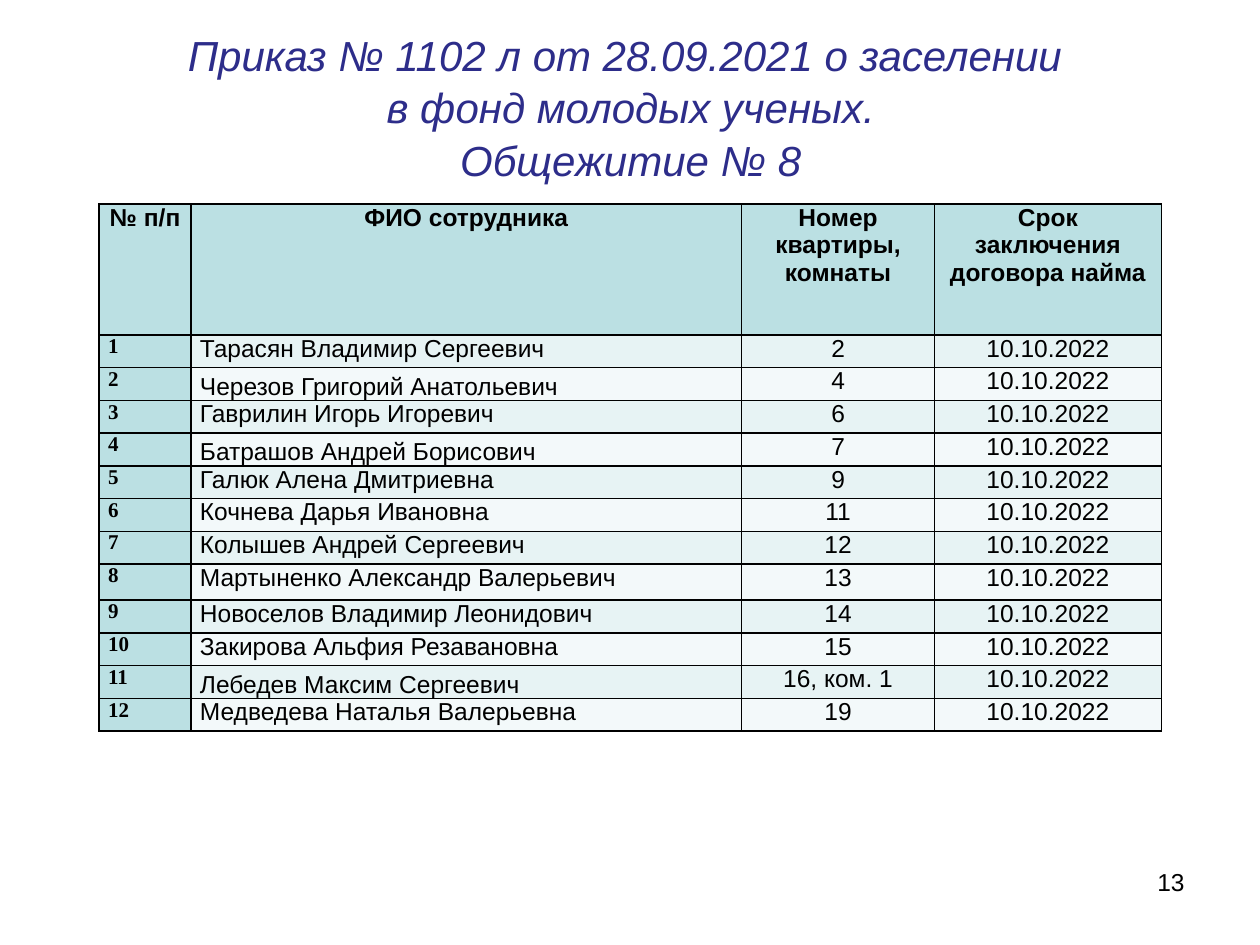
from lxml.etree import SubElement
from pptx import Presentation
from pptx.dml.color import RGBColor
from pptx.enum.text import MSO_ANCHOR, MSO_AUTO_SIZE, PP_ALIGN
from pptx.oxml.ns import qn
from pptx.util import Cm, Pt

BLACK, NAVY = "000000", "2D2D8A"
TEAL, BAND_DARK, BAND_LIGHT = "BBE0E3", "E7F3F4", "F3F9FA"

HEADERS = ["№ п/п", "ФИО сотрудника", "Номер квартиры, комнаты",
           "Срок заключения договора найма"]
RESIDENTS = [
    ("Тарасян Владимир Сергеевич", "2"),
    ("Черезов Григорий Анатольевич", "4"),
    ("Гаврилин Игорь Игоревич", "6"),
    ("Батрашов Андрей Борисович", "7"),
    ("Галюк Алена Дмитриевна", "9"),
    ("Кочнева Дарья Ивановна", "11"),
    ("Колышев Андрей Сергеевич", "12"),
    ("Мартыненко Александр Валерьевич", "13"),
    ("Новоселов Владимир Леонидович", "14"),
    ("Закирова Альфия Резавановна", "15"),
    ("Лебедев Максим Сергеевич", "16, ком. 1"),
    ("Медведева Наталья Валерьевна", "19"),
]
CONTRACT_END = "10.10.2022"
BOTTOM_NAME_ROWS = {2, 4, 11}
COLUMN_WIDTHS = [1.85, 11.1, 3.89, 4.57]
HEADER_HEIGHT, ROW_HEIGHT, TALL_ROW_HEIGHT, TALL_ROW = 2.64, 0.66, 0.73, 8


def color(value):
    return RGBColor.from_string(value)


class SlideBuilder:
    def __init__(self, page):
        self.page = page

    def style(self, para, size, align, font="Arial", ink=BLACK, bold=False, italic=False):
        para.alignment = align
        para.font.name, para.font.size = font, Pt(size)
        para.font.bold, para.font.italic = bold, italic
        para.font.color.rgb = color(ink)

    def title(self, text, left, top, width, height):
        box = self.page.shapes.title
        box.left, box.top, box.width, box.height = Cm(left), Cm(top), Cm(width), Cm(height)
        frame = box.text_frame
        frame.auto_size = MSO_AUTO_SIZE.NONE
        frame.vertical_anchor = MSO_ANCHOR.MIDDLE
        para = frame.paragraphs[0]
        para.text = text
        para.line_spacing = 1.05
        self.style(para, 24, PP_ALIGN.CENTER, ink=NAVY, italic=True)

    def text(self, text, left, top, width, height):
        box = self.page.shapes.add_textbox(Cm(left), Cm(top), Cm(width), Cm(height))
        box.text_frame.word_wrap = True
        para = box.text_frame.paragraphs[0]
        para.text = text
        self.style(para, 14, PP_ALIGN.RIGHT)

    def table(self, left, top, widths, heights):
        grid = self.page.shapes.add_table(
            len(heights), len(widths), Cm(left), Cm(top),
            Cm(sum(widths)), Cm(sum(heights))).table
        for column, width in zip(grid.columns, widths):
            column.width = Cm(width)
        for row, height in zip(grid.rows, heights):
            row.height = Cm(height)
        return grid

    def cell(self, cell, text, fill, align, size=14, anchor=MSO_ANCHOR.TOP, **look):
        cell.margin_left = cell.margin_right = Cm(0.18)
        cell.margin_top = cell.margin_bottom = 0
        cell.vertical_anchor = anchor
        para = cell.text_frame.paragraphs[0]
        para.text = text
        self.style(para, size, align, **look)
        self.borders(cell)
        cell.fill.solid()
        cell.fill.fore_color.rgb = color(fill)

    def borders(self, cell):
        properties = cell._tc.get_or_add_tcPr()
        for side in ("a:lnL", "a:lnR", "a:lnT", "a:lnB"):
            line = SubElement(properties, qn(side), w=str(Pt(1)))
            SubElement(SubElement(line, qn("a:solidFill")), qn("a:srgbClr"), val=BLACK)


def main():
    deck = Presentation()
    deck.slide_width, deck.slide_height = Cm(25.4), Cm(19.05)
    page = deck.slides.add_slide(deck.slide_layouts[5])
    builder = SlideBuilder(page)

    # Page number
    builder.text("13", 18.21, 17.35, 5.92, 1.32)

    # Table of residents
    heights = [HEADER_HEIGHT] + [ROW_HEIGHT] * len(RESIDENTS)
    heights[TALL_ROW] = TALL_ROW_HEIGHT
    grid = builder.table(2, 4.11, COLUMN_WIDTHS, heights)
    for column, header in enumerate(HEADERS):
        builder.cell(grid.cell(0, column), header, TEAL, PP_ALIGN.CENTER, bold=True)
    for row, (name, room) in enumerate(RESIDENTS, start=1):
        band = BAND_DARK if row % 2 else BAND_LIGHT
        anchor = MSO_ANCHOR.BOTTOM if row in BOTTOM_NAME_ROWS else MSO_ANCHOR.TOP
        builder.cell(grid.cell(row, 0), str(row), TEAL, PP_ALIGN.JUSTIFY, size=12,
                     font="Times New Roman", bold=True)
        builder.cell(grid.cell(row, 1), name, band, PP_ALIGN.LEFT, anchor=anchor)
        builder.cell(grid.cell(row, 2), room, band, PP_ALIGN.CENTER)
        builder.cell(grid.cell(row, 3), CONTRACT_END, band, PP_ALIGN.CENTER)

    # Title
    builder.title("Приказ № 1102 л от 28.09.2021 о заселении \vв фонд молодых ученых."
                  "\vОбщежитие № 8", 2.9, 0.74, 19.63, 2.79)

    deck.save("out.pptx")


if __name__ == "__main__":
    main()
